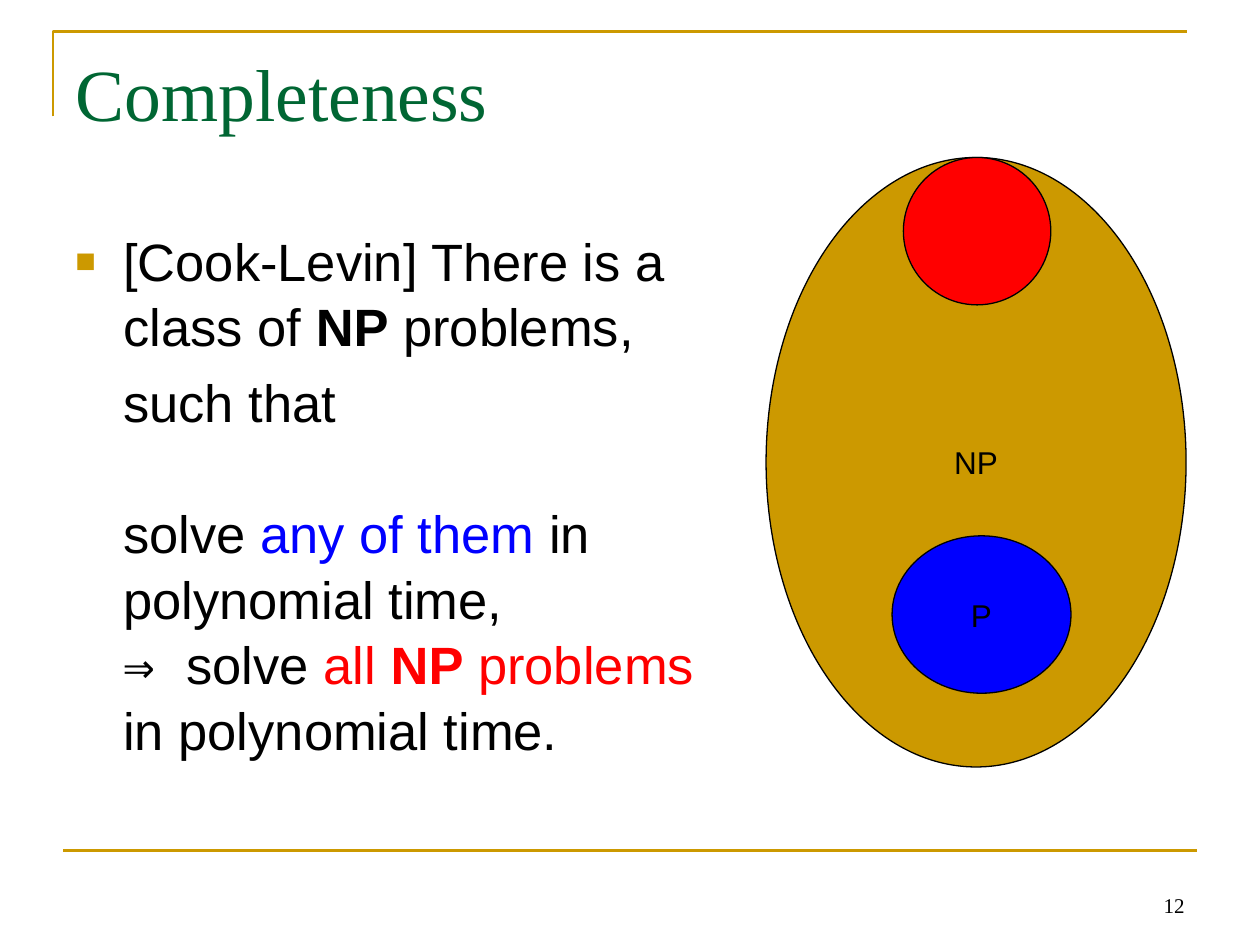
import pptx
import pptx.util
import pptx.dml.color
import pptx.enum.shapes
import pptx.enum.text
import pptx.oxml.ns
import lxml.etree

Inches, Pt = pptx.util.Inches, pptx.util.Pt
RGBColor = pptx.dml.color.RGBColor
ALIGN, ANCHOR = pptx.enum.text.PP_ALIGN, pptx.enum.text.MSO_ANCHOR
GOLD = RGBColor(0xCC, 0x99, 0x00)
GREEN = RGBColor(0x00, 0x66, 0x33)
BLUE = RGBColor(0x00, 0x00, 0xFF)
RED = RGBColor(0xFF, 0x00, 0x00)
BLACK = RGBColor(0x00, 0x00, 0x00)


def style(font, size, color, name="Arial", bold=False):
    font.size, font.name, font.bold = Pt(size), name, bold
    font.color.rgb = color


def add_xml(parent, tag, **attributes):
    return lxml.etree.SubElement(parent, pptx.oxml.ns.qn(tag), attributes)


deck = pptx.Presentation()
deck.slide_width, deck.slide_height = Inches(10), Inches(7.5)
W, H = deck.slide_width, deck.slide_height
slide = deck.slides.add_slide(deck.slide_layouts[5])
shapes = slide.shapes

corner = shapes.build_freeform(int(W * 0.042), int(H * 0.123))
corner.add_line_segments(
    [(int(W * 0.042), int(H * 0.033)), (int(W * 0.942), int(H * 0.033))], close=False)
top_rule = corner.convert_to_shape()
top_rule.fill.background()
top_rule.shadow.inherit = False
bottom_rule = shapes.add_connector(
    pptx.enum.shapes.MSO_CONNECTOR.STRAIGHT,
    int(W * 0.05), int(H * 0.9), int(W * 0.95), int(H * 0.9))
add_xml(bottom_rule._element.spPr, "a:effectLst")
for rule in (top_rule, bottom_rule):
    rule.line.color.rgb = GOLD
    rule.line.width = Pt(1.5)

title = shapes.title
title.left, title.top = int(W * 0.05), int(H * 0.04)
title.width, title.height = int(W * 0.9), int(H / 6)
title.text_frame.text = "Completeness"
title.text_frame.vertical_anchor = ANCHOR.TOP
heading = title.text_frame.paragraphs[0]
heading.alignment = ALIGN.LEFT
heading.line_spacing = 1.04
style(heading.runs[0].font, 42, GREEN, "Times New Roman")

theorem = shapes.add_textbox(
    int(W * 0.05), int(H * 0.233), int(W * 0.533), int(H * 0.66)).text_frame
theorem.word_wrap = True
statements = [
    [("[Cook-Levin] There is a class of ", BLACK, False),
     ("NP", BLACK, True),
     (" problems,", BLACK, False)],
    [("such that\v\vsolve ", BLACK, False),
     ("any of them ", BLUE, False),
     ("in polynomial time, \v", BLACK, False),
     ("⇒ ", BLACK, False),
     ("solve ", BLACK, False),
     ("all ", RED, False),
     ("NP", RED, True),
     (" problems", RED, False),
     (" in polynomial time.", BLACK, False)],
]
for index, statement in enumerate(statements):
    paragraph = theorem.add_paragraph() if index else theorem.paragraphs[0]
    paragraph.space_before = Pt(6)
    paragraph.line_spacing = 1.04
    properties = paragraph._p.get_or_add_pPr()
    properties.set("marL", str(Inches(0.38)))
    if index == 0:
        properties.set("indent", str(-Inches(0.38)))
        add_xml(add_xml(properties, "a:buClr"), "a:srgbClr", val=str(GOLD))
        add_xml(properties, "a:buSzPct", val="65000")
        add_xml(properties, "a:buFont", typeface="Arial")
        add_xml(properties, "a:buChar", char="■")
    for words, color, bold in statement:
        *broken_lines, last_line = words.split("\v")
        for line in broken_lines + [last_line]:
            if line:
                run = paragraph.add_run()
                run.text = line
                face = "DejaVu Sans Mono" if "⇒" in line else "Arial"
                style(run.font, 30, color, face, bold)
            if broken_lines:
                broken_lines.pop()
                paragraph.add_line_break()
    for line_break in paragraph._p.findall(pptx.oxml.ns.qn("a:br")):
        add_xml(line_break, "a:rPr", sz="3000")

for label, color, left, top, width, height in [
    ("NP", GOLD, 0.608, 1 / 6, 1 / 3, 0.645),
    ("P", BLUE, 0.708, 0.567, 0.142, 1 / 6),
    ("", RED, 0.717, 1 / 6, 0.117, 0.156),
]:
    problem_class = shapes.add_shape(
        pptx.enum.shapes.MSO_SHAPE.OVAL,
        int(W * left), int(H * top), int(W * width), int(H * height))
    problem_class.shadow.inherit = False
    problem_class.fill.solid()
    problem_class.fill.fore_color.rgb = color
    problem_class.line.color.rgb = BLACK
    problem_class.line.width = Pt(0.75)
    if label:
        caption = problem_class.text_frame
        caption.text = label
        caption.word_wrap = False
        caption.vertical_anchor = ANCHOR.MIDDLE
        caption.paragraphs[0].alignment = ALIGN.CENTER
        style(caption.paragraphs[0].runs[0].font, 18, BLACK)

page = shapes.add_textbox(
    int(W * 0.717), int(H * 0.911), int(W * 0.233), int(H / 15)).text_frame
page.text = "12"
page.word_wrap = True
page.vertical_anchor = ANCHOR.BOTTOM
page.paragraphs[0].alignment = ALIGN.RIGHT
style(page.paragraphs[0].runs[0].font, 12, BLACK, "Times New Roman")

deck.save("out.pptx")
